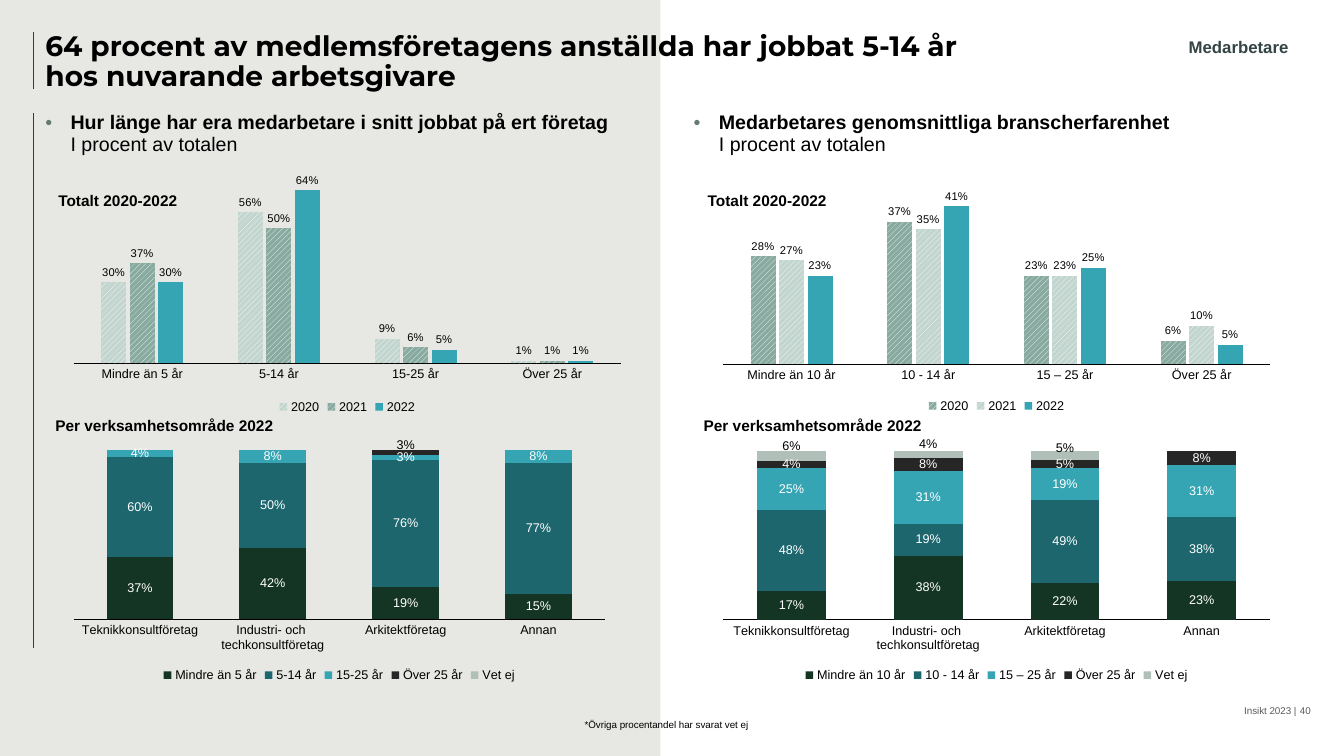
"""Builds the slide on how long employees have stayed, with four column charts."""
from lxml import etree
from pptx import Presentation
from pptx.chart.data import CategoryChartData
from pptx.dml.color import RGBColor
from pptx.enum.chart import XL_CHART_TYPE as ChartType, XL_LABEL_POSITION as LabelPos
from pptx.enum.chart import XL_LEGEND_POSITION as LegendPos, XL_TICK_MARK as TickMark
from pptx.enum.dml import MSO_PATTERN as Pattern
from pptx.enum.shapes import MSO_CONNECTOR as Connector, MSO_SHAPE as Shape
from pptx.enum.text import MSO_ANCHOR as Anchor, MSO_AUTO_SIZE as AutoSize, PP_ALIGN as Align
from pptx.oxml.ns import qn
from pptx.util import Inches, Pt

TITLE = "64 procent av medlemsföretagens anställda har jobbat 5-14 år \nhos nuvarande arbetsgivare"
SUBTITLE = "I procent av totalen"
HEADINGS = [
    ("Hur länge har era medarbetare i snitt jobbat på ert företag", (0.45, 1.12, 5.82, 0.5)),
    ("Medarbetares genomsnittliga branscherfarenhet", (6.88, 1.12, 6.3, 0.5)),
]
CAPTIONS = [
    ("Totalt 2020-2022", (0.48, 1.85, 1.61, 0.29)),
    ("Totalt 2020-2022", (6.92, 1.85, 1.61, 0.29)),
    ("Per verksamhetsområde 2022", (0.45, 4.08, 2.87, 0.29)),
    ("Per verksamhetsområde 2022", (6.88, 4.08, 2.87, 0.29)),
]
PALE, SAGE, TEAL = "C3D5CF", "88AAA0", "35A5B4"
STACK_COLORS = ["153524", "1D666E", TEAL, "262626", "B0BFB7"]
AREAS = ["Teknikkonsultföretag", "Industri- och \ntechkonsultföretag", "Arkitektföretag", "Annan"]
YEARLY = [
    {"box": (0.62, 1.68, 5.65, 2.47), "plot": (0.02, 0.02, 0.96, 0.76), "top": 0.7,
     "categories": ["Mindre än 5 år", "5-14 år", "15-25 år", "Över 25 år"],
     "colors": [PALE, SAGE, TEAL],
     "series": {"2020": (0.3, 0.56, 0.09, 0.01), "2021": (0.37, 0.5, 0.06, 0.01),
                "2022": (0.3, 0.64, 0.05, 0.01)}},
    {"box": (7.06, 1.85, 5.65, 2.29), "plot": (0.02, 0.02, 0.96, 0.75), "top": 0.45,
     "categories": ["Mindre än 10 år", "10 - 14 år", "15 – 25 år", "Över 25 år"],
     "colors": [SAGE, PALE, TEAL],
     "series": {"2020": (0.28, 0.37, 0.23, 0.06), "2021": (0.27, 0.35, 0.23, 0.1),
                "2022": (0.23, 0.41, 0.25, 0.05)}},
]
STACK_PLOT = (0.02, 0.05, 0.96, 0.68)
BY_AREA = [
    {"box": (0.62, 4.34, 5.49, 2.47), "plot": STACK_PLOT, "top": 1,
     "categories": AREAS, "colors": STACK_COLORS,
     "series": {"Mindre än 5 år": (0.37, 0.42, 0.19, 0.15), "5-14 år": (0.6, 0.5, 0.76, 0.77),
                "15-25 år": (0.04, 0.08, 0.03, 0.08), "Över 25 år": (0, 0, 0.03, 0),
                "Vet ej": (0, 0, 0, 0)},
     "raised": {("Över 25 år", 2): -0.03}},
    {"box": (7.06, 4.34, 5.65, 2.47), "plot": STACK_PLOT, "top": 1,
     "categories": AREAS, "colors": STACK_COLORS,
     "series": {"Mindre än 10 år": (0.17, 0.38, 0.22, 0.23), "10 - 14 år": (0.48, 0.19, 0.49, 0.38),
                "15 – 25 år": (0.25, 0.31, 0.19, 0.31), "Över 25 år": (0.04, 0.08, 0.05, 0.08),
                "Vet ej": (0.06, 0.04, 0.05, 0)},
     "raised": {("Vet ej", 0): -0.04, ("Vet ej", 1): -0.04, ("Vet ej", 2): -0.03}},
]


def rgb(color):
    return RGBColor.from_string(color)


def style(font, size, color="000000", bold=False, name="Arial"):
    font.size, font.bold, font.name = Pt(size), bold, name
    font.color.rgb = rgb(color)


def place(shape, box):
    shape.left, shape.top, shape.width, shape.height = map(Inches, box)


def prepare(frame, inset=True, anchor=Anchor.TOP):
    frame.word_wrap, frame.auto_size = True, AutoSize.NONE
    frame.vertical_anchor = anchor
    if not inset:
        frame.margin_left = frame.margin_right = frame.margin_top = frame.margin_bottom = 0


def add_run(paragraph, text, *look, **more):
    for number, line in enumerate(text.split("\n")):
        if number:
            paragraph.add_line_break()
        run = paragraph.add_run()
        run.text = line
        style(run.font, *look, **more)


def add_label(slide, text, box, size, color="000000", bold=False, align=Align.LEFT,
              inset=True, anchor=Anchor.TOP):
    frame = slide.shapes.add_textbox(*map(Inches, box)).text_frame
    prepare(frame, inset, anchor)
    frame.paragraphs[0].alignment = align
    add_run(frame.paragraphs[0], text, size, color, bold)


def fill_heading(holder, question, box):
    place(holder, box)
    prepare(holder.text_frame, inset=False)
    paragraph = holder.text_frame.paragraphs[0]
    props = paragraph._p.get_or_add_pPr()
    props.set("marL", str(Inches(0.25)))
    props.set("indent", str(Inches(-0.25)))
    bullet_color = etree.SubElement(props, qn("a:buClr"))
    etree.SubElement(bullet_color, qn("a:srgbClr")).set("val", "657B71")
    etree.SubElement(props, qn("a:buChar")).set("char", "•")
    paragraph.line_spacing, paragraph.space_before = 0.9, Pt(0)
    add_run(paragraph, question, 14, bold=True)
    paragraph.add_line_break()
    add_run(paragraph, SUBTITLE, 14)


def manual_layout(**settings):
    layout = etree.Element(qn("c:layout"))
    manual = etree.SubElement(layout, qn("c:manualLayout"))
    for tag, value in settings.items():
        etree.SubElement(manual, qn("c:" + tag)).set("val", str(value))
    return layout


def fix_plot(chart, plot):
    area = chart._chartSpace.chart.plotArea
    for old in area.findall(qn("c:layout")):
        area.remove(old)
    x, y, w, h = plot
    area.insert(0, manual_layout(layoutTarget="inner", xMode="edge", yMode="edge", x=x, y=y, w=w, h=h))


def paint(fill, color, hatched):
    if hatched:
        fill.patterned()
        fill.pattern = Pattern.WIDE_UPWARD_DIAGONAL
        fill.fore_color.rgb, fill.back_color.rgb = rgb("FFFFFF"), rgb(color)
    else:
        fill.solid()
        fill.fore_color.rgb = rgb(color)


def add_columns(slide, content, stacked):
    data = CategoryChartData(number_format="0%")
    data.categories = content["categories"]
    for name, values in content["series"].items():
        data.add_series(name, values)
    kind = ChartType.COLUMN_STACKED_100 if stacked else ChartType.COLUMN_CLUSTERED
    chart = slide.shapes.add_chart(kind, *map(Inches, content["box"]), data).chart
    style(chart.font, 10)
    chart.has_title = False
    chart.has_legend = True
    chart.legend.position, chart.legend.include_in_layout = LegendPos.BOTTOM, False
    style(chart.legend.font, 9)
    values, categories = chart.value_axis, chart.category_axis
    values.visible = values.has_major_gridlines = False
    values.minimum_scale, values.maximum_scale = 0, content["top"]
    categories.major_tick_mark = categories.minor_tick_mark = TickMark.NONE
    categories.format.line.color.rgb, categories.format.line.width = rgb("000000"), Pt(0.75)
    style(categories.tick_labels.font, 9)
    plot = chart.plots[0]
    plot.vary_by_categories = False
    plot.gap_width, plot.overlap = (99, 100) if stacked else (219, -14)
    for series, color in zip(plot.series, content["colors"]):
        paint(series.format.fill, color, not stacked and color != TEAL)
        labels = series.data_labels
        labels.show_value = True
        labels.number_format, labels.number_format_is_linked = "0%;;", False
        labels.position = LabelPos.CENTER if stacked else LabelPos.OUTSIDE_END
        style(labels.font, 9 if stacked else 8, "FFFFFF" if stacked else "000000")
        for (name, point), lift in content.get("raised", {}).items():
            if name == series.name:
                label = series.points[point].data_label
                style(label.font, 9)
                label.position = LabelPos.CENTER
                index = label._dLbl.find(qn("c:idx"))
                index.addnext(manual_layout(x=0, y=lift))
    fix_plot(chart, content["plot"])


def main():
    deck = Presentation()
    deck.slide_width, deck.slide_height = Inches(13.33), Inches(7.5)
    slide = deck.slides.add_slide(deck.slide_layouts[3])
    slide.background.fill.solid()
    slide.background.fill.fore_color.rgb = rgb("E7E8E4")

    panel = slide.shapes.add_shape(Shape.RECTANGLE, *map(Inches, (6.55, 0, 6.78, 7.5)))
    panel.shadow.inherit = False
    paint(panel.fill, "FFFFFF", False)
    panel.line.fill.background()
    slide.shapes._spTree.insert(2, panel._element)
    for top, bottom in ((0.32, 0.88), (1.12, 6.43)):
        rule = slide.shapes.add_connector(Connector.STRAIGHT, *map(Inches, (0.33, top, 0.33, bottom)))
        rule.line.color.rgb, rule.line.width = rgb("323E39"), Pt(0.5)
        etree.SubElement(rule._element.spPr, qn("a:effectLst"))

    title, *holders = slide.placeholders
    place(title, (0.45, 0.32, 12.55, 0.56))
    prepare(title.text_frame, inset=False)
    heading = title.text_frame.paragraphs[0]
    heading.alignment, heading.line_spacing = Align.LEFT, 0.9
    add_run(heading, TITLE, 20, bold=True, name="Montserrat")
    for holder, (question, box) in zip(holders, HEADINGS):
        fill_heading(holder, question, box)

    for content in YEARLY:
        add_columns(slide, content, stacked=False)
    for content in BY_AREA:
        add_columns(slide, content, stacked=True)
    for caption, box in CAPTIONS:
        add_label(slide, caption, box, 11, bold=True)
    add_label(slide, "Medarbetare", (11.57, 0.32, 1.43, 0.3), 12, "344444", True, Align.CENTER)
    add_label(slide, "*Övriga procentandel har svarat vet ej", (5.53, 7.08, 2.16, 0.2), 7, align=Align.CENTER)
    for text, box in (("Insikt 2023 |", (8.36, 6.93, 4.5, 0.18)), ("40", (10, 6.93, 3, 0.18))):
        add_label(slide, text, box, 7, "595959", False, Align.RIGHT, False, Anchor.BOTTOM)
    deck.save("out.pptx")


if __name__ == "__main__":
    main()
